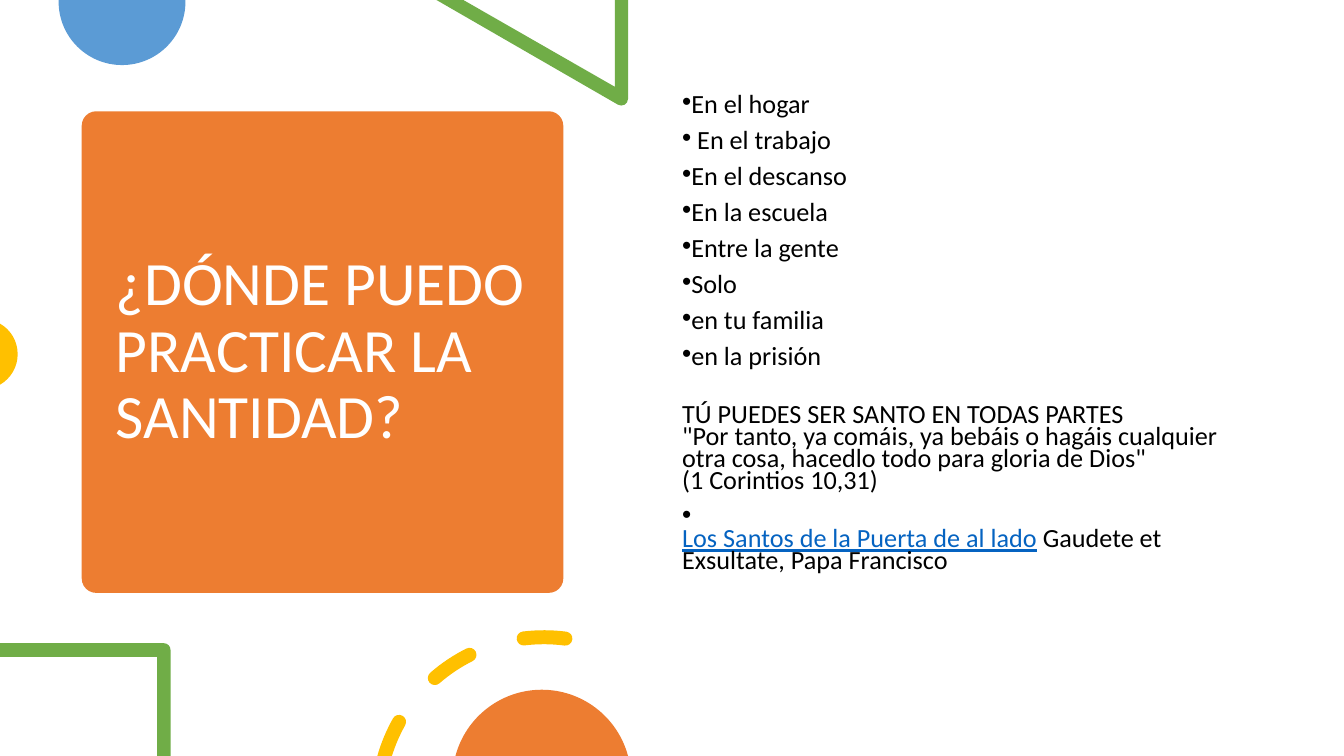
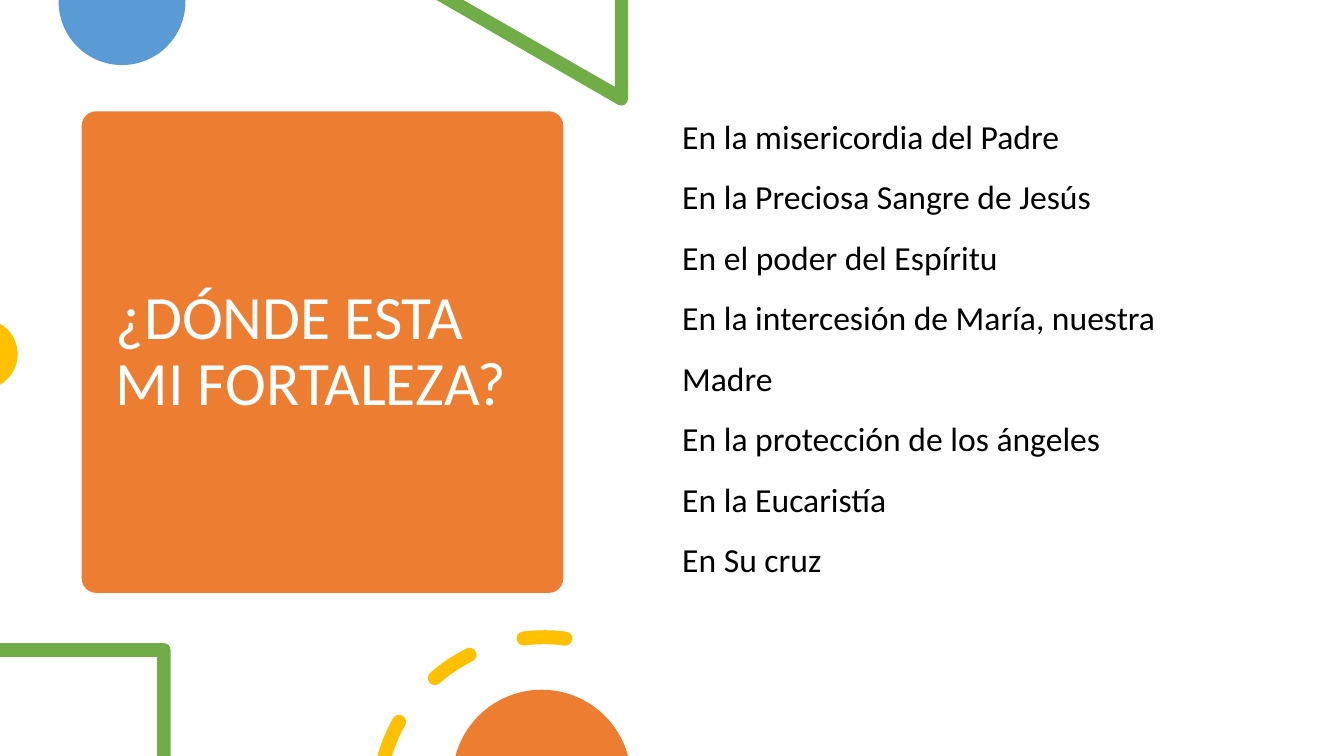
import math

import pptx
import pptx.dml.color
import pptx.enum.shapes
import pptx.enum.text
import pptx.oxml.ns
import pptx.util
from lxml import etree

Pt = pptx.util.Pt
RGBColor = pptx.dml.color.RGBColor
qn = pptx.oxml.ns.qn

ORANGE = RGBColor(0xED, 0x7D, 0x31)
BLUE = RGBColor(0x5B, 0x9B, 0xD5)
GREEN = RGBColor(0x70, 0xAD, 0x47)
YELLOW = RGBColor(0xFF, 0xC0, 0x00)
WHITE = RGBColor(0xFF, 0xFF, 0xFF)
BLACK = RGBColor(0x00, 0x00, 0x00)
LINK = RGBColor(0x05, 0x63, 0xC1)

WIDTH, HEIGHT = 960, 540
PANEL_BOX = (58.4, 79.5, 344, 344)
TITLE_BOX = (75.6, 87.6, 310.3, 328.3)
BODY_BOX = (480.2, 64.8, 414, 385.2)

TITLE_FONT = {"name": "Calibri", "size": Pt(44)}
PLACES_FONT = {"name": "Calibri", "size": Pt(18.7)}
STRENGTH_FONT = {"name": "Calibri", "size": Pt(24)}

TITLE_FORMAT = {"line_spacing": 0.9}
PLACES_FORMAT = {"line_spacing": 0.7, "space_before": Pt(10)}
MESSAGE_FORMAT = {"line_spacing": 0.7, "space_before": Pt(26)}
STRENGTH_FORMAT = {"line_spacing": 1.5, "space_before": Pt(10)}

PLACES = [
    "En el hogar", " En el trabajo", "En el descanso", "En la escuela",
    "Entre la gente", "Solo", "en tu familia", "en la prisión",
]
MESSAGE = [
    "TÚ PUEDES SER SANTO EN TODAS PARTES",
    "\"Por tanto, ya comáis, ya bebáis o hagáis cualquier otra cosa, "
    "hacedlo todo para gloria de Dios\"",
    "(1 Corintios 10,31)",
]
READING = [
    ("\v", {}),
    ("Los Santos de la Puerta de al lado", {"color": LINK, "underline": True}),
    (" Gaudete et Exsultate, Papa Francisco", {}),
]
STRENGTHS = [
    "En la misericordia del Padre",
    "En la Preciosa Sangre de Jesús",
    "En el poder del Espíritu",
    "En la intercesión de María, nuestra Madre",
    "En la protección de los ángeles",
    "En la Eucaristía",
    "En Su cruz",
]

# Each body paragraph: runs, paragraph format, bulleted
SLIDES = [
    {
        "title": "¿DÓNDE PUEDO PRACTICAR LA SANTIDAD?",
        "font": PLACES_FONT,
        "body": [([(place, {})], PLACES_FORMAT, True) for place in PLACES]
        + [([("\v".join(MESSAGE), {})], MESSAGE_FORMAT, False),
           (READING, PLACES_FORMAT, True)],
    },
    {
        "title": "¿DÓNDE ESTA MI FORTALEZA?",
        "font": STRENGTH_FONT,
        "body": [([("\v".join(STRENGTHS), {})], STRENGTH_FORMAT, False)],
    },
]


def arc(center, radius, start, end, pieces=2):
    """A start node, then Bézier nodes; degrees run clockwise from the right.

    A node is a tuple of points: one for a line, three for a curve.
    """
    step = math.radians(end - start) / pieces
    handle = 4 / 3 * math.tan(step / 4)

    def locate(angle, tangent=0.0):
        cosine, sine = math.cos(angle), math.sin(angle)
        return (center[0] + radius * (cosine - tangent * sine),
                center[1] + radius * (sine + tangent * cosine))

    angles = [math.radians(start) + step * index for index in range(pieces + 1)]
    return [(locate(angles[0]),)] + [
        (locate(first, handle), locate(last, -handle), locate(last))
        for first, last in zip(angles, angles[1:])
    ]


def line(*points):
    return [(point,) for point in points]


def ring_dash(center, radius, half_width, start, sweep):
    """Outline of a round-ended dash on a ring, cut at the slide's bottom edge."""
    end = start + sweep
    outer, inner = radius + half_width, radius - half_width
    outer_start, inner_start = (
        max(start, 180 + math.degrees(math.asin((center[1] - HEIGHT) / edge)))
        for edge in (outer, inner)
    )
    start_center, end_center = (
        arc(center, radius, angle, angle, 1)[0][0] for angle in (start, end))
    outline = (
        arc(center, outer, outer_start, end)
        + arc(end_center, half_width, end, end + 180)[1:]
        + arc(center, inner, end, inner_start)[1:]
    )
    if outer_start == start:
        outline += arc(start_center, half_width, start + 180, start + 360)[1:]
    return outline


DECORATIONS = [
    (BLUE, [line((132.5, 0), (41.9, 0)) + arc((87.2, 1.2), 45.3, 180, 0)]),
    (GREEN, [line((311.8, 0), (331, 0), (439.2, 62), (439.2, 0), (448.6, 0))
             + arc((443.8, 70.6), 4.8, 0, 120)]),
    (YELLOW, [arc((-12.6, 253), 25.2, -60, 60)]),
    (GREEN, [line((0, 459.4)) + arc((117, 464.2), 4.8, 270, 360, 1)
             + line((121.8, HEIGHT), (112.2, HEIGHT), (112.2, 469.2), (0, 469.2))]),
    (YELLOW, [ring_dash((388.6, 574), 118.8, 5, 195 + 34 * index, 14.4) for index in range(3)]),
    (ORANGE, [arc((387, 556.5), 63.8, 195, 345)]),
]


def apply(target, values):
    for name, value in values.items():
        setattr(target, name, value)


def paint(shape, color):
    shape.shadow.inherit = False
    shape.fill.solid()
    shape.fill.fore_color.rgb = color
    shape.line.fill.background()


def bend_segments(shape, nodes):
    """Turn the straight segments whose node has three points into curves."""
    for segment, node in zip(list(shape._element.iter(qn("a:lnTo"))), nodes):
        if len(node) == 3:
            curve = etree.Element(qn("a:cubicBezTo"))
            for x, y in node:
                point = etree.SubElement(curve, qn("a:pt"))
                point.set("x", str(Pt(x) - shape.left))
                point.set("y", str(Pt(y) - shape.top))
            segment.getparent().replace(segment, curve)


def add_decoration(slide, color, outlines):
    contours = [[(Pt(node[-1][0]), Pt(node[-1][1])) for node in outline]
                for outline in outlines]
    builder = slide.shapes.build_freeform(*contours[0][0], scale=1.0)
    for index, contour in enumerate(contours):
        if index:
            builder.move_to(*contour[0])
        builder.add_line_segments(contour[1:], close=True)
    shape = builder.convert_to_shape()
    bend_segments(shape, [node for outline in outlines for node in outline[1:]])
    paint(shape, color)


def add_bullet(paragraph):
    properties = paragraph._p.get_or_add_pPr()
    properties.set("marL", "0")
    properties.set("indent", str(-Pt(18)))
    for tag, name, value in (("a:buFont", "typeface", "Arial"), ("a:buChar", "char", "•")):
        etree.SubElement(properties, qn(tag)).set(name, value)


def add_text(slide, box, paragraphs, font, color, anchor):
    frame = slide.shapes.add_textbox(*map(Pt, box)).text_frame
    apply(frame, {"word_wrap": True, "vertical_anchor": anchor})
    for index, (runs, paragraph_format, bulleted) in enumerate(paragraphs):
        paragraph = frame.add_paragraph() if index else frame.paragraphs[0]
        apply(paragraph, paragraph_format)
        apply(paragraph.font, font)
        if bulleted:
            add_bullet(paragraph)
        for text, style in runs:
            for line_index, text_line in enumerate(text.split("\v")):
                if line_index:
                    paragraph.add_line_break()
                if text_line:
                    run = paragraph.add_run()
                    run.text = text_line
                    apply(run.font, {**font, "underline": style.get("underline")})
                    run.font.color.rgb = style.get("color", color)


def add_slide(presentation, content):
    slide = presentation.slides.add_slide(presentation.slide_layouts[6])
    panel = slide.shapes.add_shape(
        pptx.enum.shapes.MSO_SHAPE.ROUNDED_RECTANGLE, *map(Pt, PANEL_BOX))
    panel.adjustments[0] = 0.03
    paint(panel, ORANGE)
    anchors = pptx.enum.text.MSO_ANCHOR
    title = [([(content["title"], {})], TITLE_FORMAT, False)]
    add_text(slide, TITLE_BOX, title, TITLE_FONT, WHITE, anchors.MIDDLE)
    for color, outlines in DECORATIONS:
        add_decoration(slide, color, outlines)
    add_text(slide, BODY_BOX, content["body"], content["font"], BLACK, anchors.TOP)


def main():
    presentation = pptx.Presentation()
    apply(presentation, {"slide_width": Pt(WIDTH), "slide_height": Pt(HEIGHT)})
    for content in SLIDES:
        add_slide(presentation, content)
    presentation.save("out.pptx")


if __name__ == "__main__":
    main()
